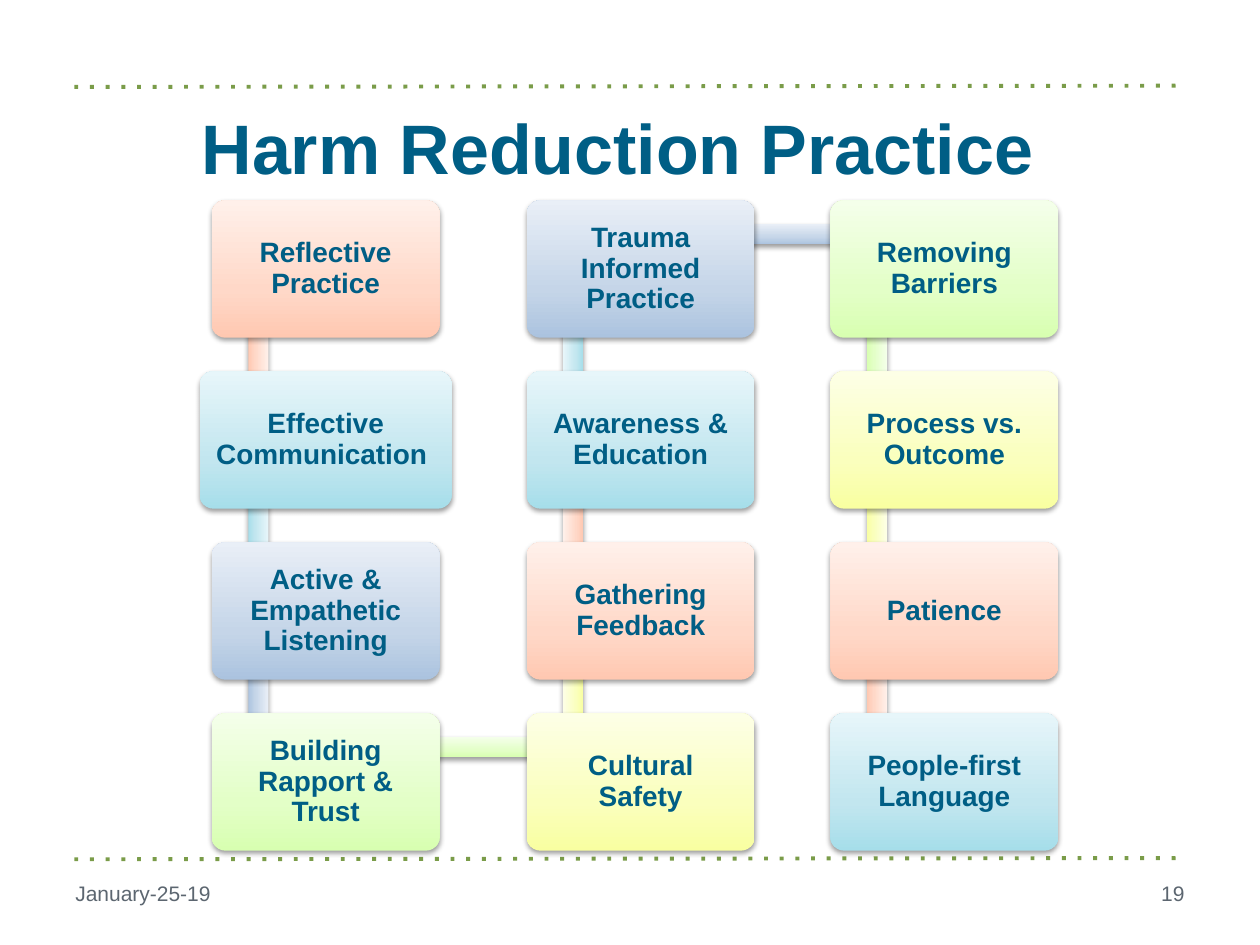
from itertools import pairwise
from math import hypot

from pptx import Presentation
from pptx.dml.color import RGBColor
from pptx.enum.shapes import MSO_CONNECTOR, MSO_SHAPE
from pptx.enum.text import MSO_ANCHOR, MSO_AUTO_SIZE, PP_ALIGN
from pptx.oxml import parse_xml
from pptx.oxml.ns import nsdecls
from pptx.util import Inches, Pt

COLORS = {"text": "005E85", "footer": "5C6670", "rule": "7A9C49", "shadow": "000000"}
# Gradient stops from bottom to top
SHADES = {
    "peach": ("FFC8B1", "FFD8C8", "FFF0EA"),
    "aqua": ("A6DEEA", "C2E6EF", "E7F6FA"),
    "blue": ("ABC3DF", "C5D5E8", "E9EFF7"),
    "green": ("D8FFB1", "E3FFC7", "F4FFEA"),
    "yellow": ("F9FFA1", "FAFFBD", "FDFFE6"),
}
STOPS = (0, 35, 100)

# Steps in reading order: down, up, then down again
STEPS = [
    ("Reflective Practice", "peach"),
    ("Effective Communication ", "aqua"),
    ("Active & Empathetic Listening", "blue"),
    ("Building Rapport & Trust", "green"),
    ("Cultural Safety", "yellow"),
    ("Gathering Feedback", "peach"),
    ("Awareness & Education", "aqua"),
    ("Trauma Informed Practice", "blue"),
    ("Removing Barriers", "green"),
    ("Process vs. Outcome", "yellow"),
    ("Patience", "peach"),
    ("People-first Language", "aqua"),
]
LEFTS = (1.68, 4.18, 6.59)
ROWS, TOP, PITCH = 4, 1.59, 1.357
WIDTH, HEIGHT, WIDE = 1.81, 1.09, 2.0
BAR, INX, INY = 0.16, 0.37, 0.27


def write(shape, text, size=16, color="text", bold=True,
          align=PP_ALIGN.CENTER, space=None, inset=None):
    frame = shape.text_frame
    frame.word_wrap = True
    frame.auto_size = MSO_AUTO_SIZE.NONE
    frame.vertical_anchor = MSO_ANCHOR.MIDDLE
    if inset is not None:
        frame.margin_left = frame.margin_right = Inches(inset)
        frame.margin_top = frame.margin_bottom = Inches(inset)
    para = frame.paragraphs[0]
    para.alignment = align
    if space:
        para.line_spacing = space
    run = para.add_run()
    run.text = text
    font = run.font
    font.name, font.size, font.bold = "Arial", Pt(size), bold
    font.color.rgb = RGBColor.from_string(COLORS[color])


def shade(shape, name):
    """Give a shape its gradient, soft shadow and no outline."""
    shape.line.fill.background()
    stops = "".join(
        f'<a:gs pos="{pos * 1000}"><a:srgbClr val="{color}"/></a:gs>'
        for pos, color in zip(STOPS, SHADES[name]))
    props = shape._element.spPr
    props.get_or_add_ln().addprevious(parse_xml(
        f'<a:gradFill {nsdecls("a")} rotWithShape="1"><a:gsLst>{stops}</a:gsLst>'
        '<a:lin ang="16200000" scaled="0"/></a:gradFill>'))
    props.append(parse_xml(
        f'<a:effectLst {nsdecls("a")}><a:outerShdw blurRad="{Pt(3.1)}" '
        f'dist="{Pt(1.6)}" dir="5400000" rotWithShape="0">'
        f'<a:srgbClr val="{COLORS["shadow"]}"><a:alpha val="38000"/></a:srgbClr>'
        '</a:outerShdw></a:effectLst>'))


def add_rule(slide, start, end):
    rule = slide.shapes.add_connector(
        MSO_CONNECTOR.STRAIGHT, Inches(0.59), Inches(start), Inches(9.41), Inches(end))
    rule.line.width = Pt(2.25)
    rule.line.color.rgb = RGBColor.from_string(COLORS["rule"])
    rule.get_or_add_ln().append(parse_xml(f'<a:prstDash {nsdecls("a")} val="dot"/>'))
    rule._element.spPr.append(parse_xml(f'<a:effectLst {nsdecls("a")}/>'))


def add_bar(slide, start, end, name):
    """Join the anchor points of two boxes."""
    (left, top), (left2, top2) = start, end
    size = hypot(left2 - left, top2 - top)
    midx, midy = (left + left2) / 2 + INX, (top + top2) / 2 + INY
    bar = slide.shapes.add_shape(
        MSO_SHAPE.RECTANGLE, Inches(midx - size / 2), Inches(midy - BAR / 2),
        Inches(size), Inches(BAR))
    if left == left2:
        bar.rotation = 90 if top2 > top else 270
    shade(bar, name)


def add_box(slide, left, top, text, name):
    width = WIDE if "Communication" in text else WIDTH
    box = slide.shapes.add_shape(
        MSO_SHAPE.ROUNDED_RECTANGLE, Inches(left - (width - WIDTH) / 2), Inches(top),
        Inches(width), Inches(HEIGHT))
    box.adjustments[0] = 0.1
    shade(box, name)
    write(box, text, space=0.9, inset=0.1)


def add_footer(slide, left, text, align):
    box = slide.shapes.add_textbox(Inches(left), Inches(6.89), Inches(2.33), Inches(0.4))
    write(box, text, size=12, color="footer", bold=False, align=align)


def place(index):
    col, row = divmod(index, ROWS)
    if col % 2:
        row = ROWS - 1 - row
    return LEFTS[col], TOP + row * PITCH


def add_snake(slide):
    spots = [place(i) for i in range(len(STEPS))]
    links = [*pairwise(spots), None]
    for spot, link, (text, name) in zip(spots, links, STEPS):
        if link:
            add_bar(slide, *link, name)
        add_box(slide, *spot, text, name)


def add_title(slide, text):
    title = slide.shapes.title
    title.left, title.top = Inches(0.49), Inches(0.58)
    title.width, title.height = Inches(8.82), Inches(1.17)
    write(title, text, size=40)


def main():
    deck = Presentation()
    deck.slide_width, deck.slide_height = Inches(10), Inches(7.5)
    slide = deck.slides.add_slide(deck.slide_layouts[5])
    add_rule(slide, 0.69, 0.68)
    add_rule(slide, 6.82, 6.81)
    add_snake(slide)
    add_title(slide, "Harm Reduction Practice")
    add_footer(slide, 0.5, "January-25-19", PP_ALIGN.LEFT)
    add_footer(slide, 7.17, "19", PP_ALIGN.RIGHT)
    deck.save("out.pptx")


if __name__ == "__main__":
    main()
